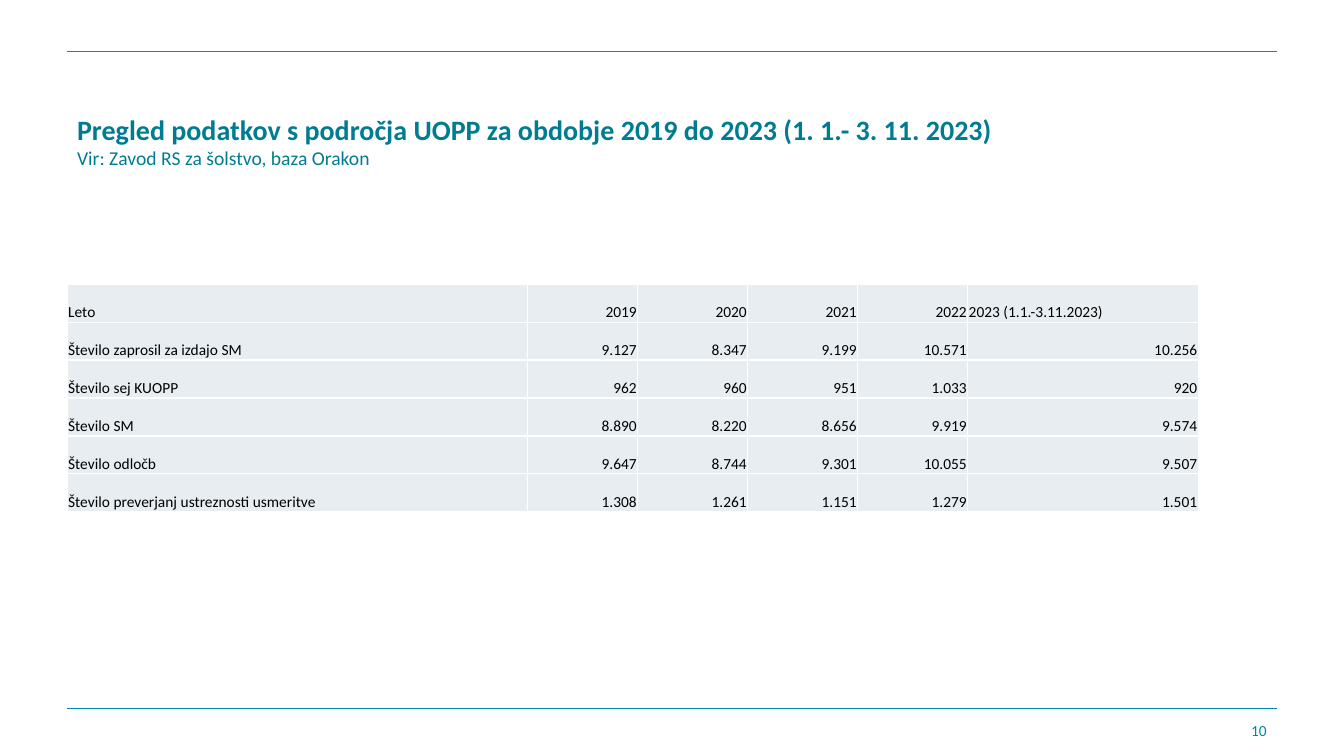
from dataclasses import dataclass

from lxml import etree
from pptx import Presentation
from pptx.dml.color import RGBColor
from pptx.enum import shapes, text
from pptx.oxml import ns
from pptx.util import Pt


@dataclass(frozen=True)
class Theme:
    font: str = "Calibri"
    title: str = "007C92"
    accent: str = "0086A8"
    rule: str = "6B6670"
    ink: str = "000000"
    cell: str = "E7EDF1"
    border: str = "FFFFFF"
    title_size: float = 20
    source_size: float = 14
    small_size: float = 11


THEME = Theme()
LEFT, RIGHT = 48, 912
COLUMNS = [329, 78.6, 78.6, 78.6, 78.6, 164.6]
ROW_HEIGHT = 27.12
ROWS = [
    ["Leto", "2019", "2020", "2021", "2022", "2023 (1.1.-3.11.2023)"],
    ["Število zaprosil za izdajo SM", "9.127", "8.347", "9.199", "10.571", "10.256"],
    ["Število sej KUOPP", "962", "960", "951", "1.033", "920"],
    ["Število SM", "8.890", "8.220", "8.656", "9.919", "9.574"],
    ["Število odločb", "9.647", "8.744", "9.301", "10.055", "9.507"],
    ["Število preverjanj ustreznosti usmeritve", "1.308", "1.261", "1.151", "1.279", "1.501"],
]


def write(p, content, size=THEME.small_size, color=THEME.ink, bold=False, align="LEFT"):
    p.alignment = text.PP_ALIGN[align]
    r = p.add_run()
    r.text = content
    r.font.name = THEME.font
    r.font.size = Pt(size)
    r.font.bold = bold
    r.font.color.rgb = RGBColor.from_string(color)


def add_box(s, left, top, width, height):
    tf = s.shapes.add_textbox(Pt(left), Pt(top), Pt(width), Pt(height)).text_frame
    tf.word_wrap = True
    tf.vertical_anchor = text.MSO_ANCHOR.MIDDLE
    return tf.paragraphs[0]


def add_rule(s, y, color, width):
    line = s.shapes.add_connector(
        shapes.MSO_CONNECTOR.STRAIGHT, Pt(LEFT), Pt(y), Pt(RIGHT), Pt(y))
    line.line.color.rgb = RGBColor.from_string(color)
    line.line.width = Pt(width)
    etree.SubElement(line._element.spPr, ns.qn("a:effectLst"))


def style_cell(cell):
    cell.margin_left = cell.margin_right = cell.margin_top = Pt(0.7)
    cell.margin_bottom = Pt(0)
    cell.vertical_anchor = text.MSO_ANCHOR.BOTTOM
    tc_pr = cell._tc.get_or_add_tcPr()
    for side in ("lnL", "lnR", "lnT", "lnB"):
        ln = etree.SubElement(tc_pr, ns.qn(f"a:{side}"), w=str(Pt(1)))
        fill = etree.SubElement(ln, ns.qn("a:solidFill"))
        etree.SubElement(fill, ns.qn("a:srgbClr"), val=THEME.border)
    cell.fill.solid()
    cell.fill.fore_color.rgb = RGBColor.from_string(THEME.cell)


def add_data_table(s, top):
    table = s.shapes.add_table(
        len(ROWS), len(COLUMNS), Pt(LEFT), Pt(top),
        Pt(sum(COLUMNS)), Pt(ROW_HEIGHT * len(ROWS))).table
    table.first_row = table.horz_banding = False
    for column, width in zip(table.columns, COLUMNS):
        column.width = Pt(width)
    for i, values in enumerate(ROWS):
        table.rows[i].height = Pt(ROW_HEIGHT)
        for j, value in enumerate(values):
            cell = table.cell(i, j)
            style_cell(cell)
            is_label = j == 0 or (i == 0 and j == len(COLUMNS) - 1)
            write(cell.text_frame.paragraphs[0], value,
                  align="LEFT" if is_label else "RIGHT")


def main():
    prs = Presentation()
    prs.slide_width, prs.slide_height = Pt(960), Pt(540)
    s = prs.slides.add_slide(prs.slide_layouts[6])

    add_rule(s, 506, THEME.accent, 1)
    add_rule(s, 36.7, THEME.rule, 0.75)

    p = add_box(s, LEFT, 74.2, 823, 52.6)
    write(p, "Pregled podatkov s področja UOPP za obdobje 2019 do 2023 (1. 1.- 3. 11. 2023)",
          size=THEME.title_size, color=THEME.title, bold=True)
    p.add_line_break()
    write(p, "Vir: Zavod RS za šolstvo, baza Orakon",
          size=THEME.source_size, color=THEME.title)

    add_data_table(s, 203)

    write(add_box(s, 688, 507.6, 224, 28.8), "10", color=THEME.accent, align="RIGHT")
    prs.save("out.pptx")


if __name__ == "__main__":
    main()
